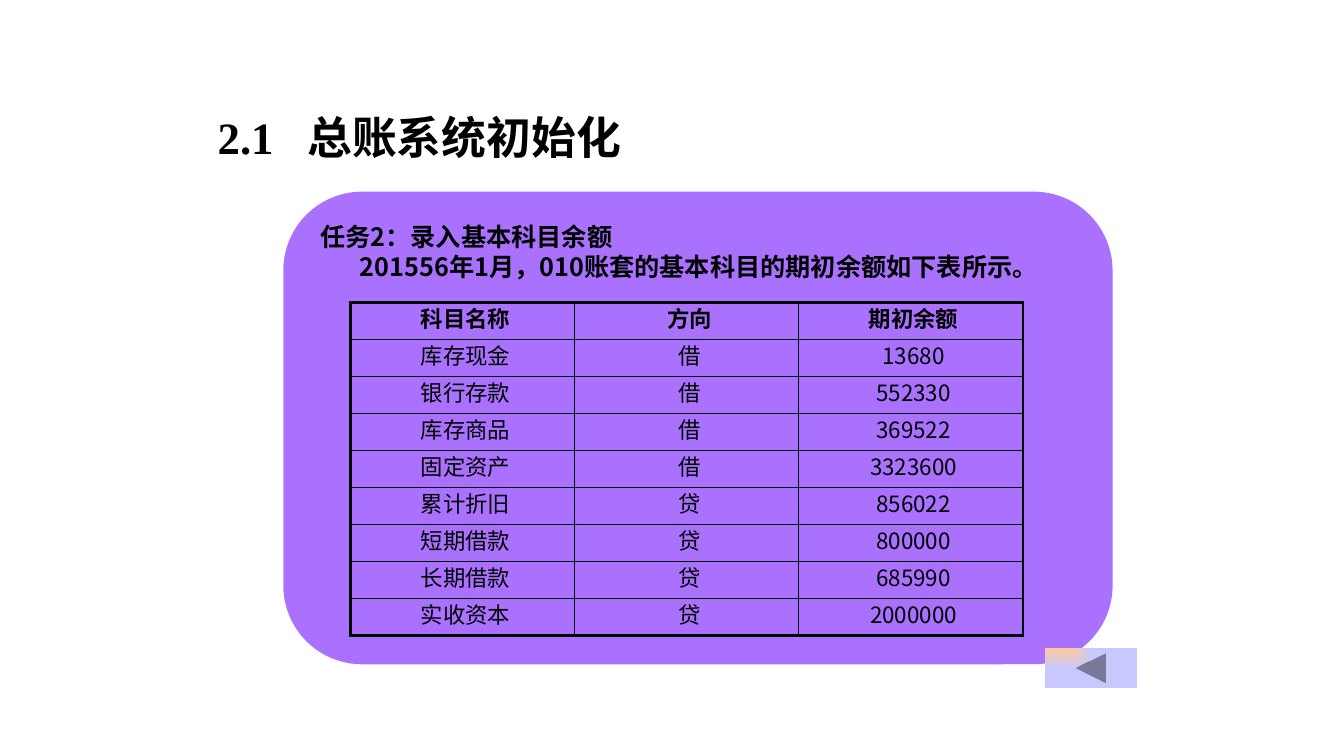
from dataclasses import dataclass

from lxml import etree
from pptx import Presentation
from pptx.dml.color import RGBColor
from pptx.enum.shapes import MSO_SHAPE
from pptx.enum.text import MSO_ANCHOR, MSO_AUTO_SIZE, PP_ALIGN
from pptx.oxml.ns import qn
from pptx.util import Cm, Pt

TITLE = "2.1\t总账系统初始化"
TASK = [
    ("任务2：录入基本科目余额", 0),
    ("201556年1月，010账套的基本科目的期初余额如下表所示。", 1),
]
BALANCES = [
    ("科目名称", "方向", "期初余额"),
    ("库存现金", "借", "13680"),
    ("银行存款", "借", "552330"),
    ("库存商品", "借", "369522"),
    ("固定资产", "借", "3323600"),
    ("累计折旧", "贷", "856022"),
    ("短期借款", "贷", "800000"),
    ("长期借款", "贷", "685990"),
    ("实收资本", "贷", "2000000"),
]

LEFT, CENTER = PP_ALIGN.LEFT, PP_ALIGN.CENTER
TOP, MIDDLE = MSO_ANCHOR.TOP, MSO_ANCHOR.MIDDLE
NO_AUTOFIT = MSO_AUTO_SIZE.NONE
ROUNDED, BACK_BUTTON = MSO_SHAPE.ROUNDED_RECTANGLE, MSO_SHAPE.ACTION_BUTTON_BACK_OR_PREVIOUS


@dataclass(frozen=True)
class Theme:
    ink: str = "000000"
    panel: str = "AA71FF"
    glow: str = "FFC89B"
    button: str = "C8C8FF"
    latin: str = "Times New Roman"
    cjk: str = "Noto Sans CJK SC"
    title: int = 32
    task: int = 18
    cell: int = 16
    frame: float = 2.25
    grid: float = 1


THEME = Theme()


def write(p, text, *, size, font=THEME.cjk, bold=False, align=LEFT, margin=0, indent=0, leading=None):
    p.alignment = align
    if leading:
        p.line_spacing = Pt(leading)
    pPr = p._p.get_or_add_pPr()
    pPr.set("marL", str(Cm(margin)))
    pPr.set("indent", str(Cm(indent)))
    r = p.add_run()
    r.text = text
    r.font.size = Pt(size)
    r.font.bold = bold
    r.font.color.rgb = RGBColor.from_string(THEME.ink)
    r.font.name = font
    etree.SubElement(r._r.get_or_add_rPr(), qn("a:ea"), typeface=THEME.cjk)


def add_plain_shape(slide, kind, left, top, width, height):
    sp = slide.shapes.add_shape(kind, Cm(left), Cm(top), Cm(width), Cm(height))
    sp.shadow.inherit = False
    sp.line.fill.background()
    return sp


def set_borders(cell, widths):
    tcPr = cell._tc.get_or_add_tcPr()
    for i, (side, width) in enumerate(widths.items()):
        ln = etree.Element(qn(f"a:ln{side}"), w=str(Pt(width)))
        fill = etree.SubElement(ln, qn("a:solidFill"))
        etree.SubElement(fill, qn("a:srgbClr"), val=THEME.ink)
        tcPr.insert(i, ln)


def add_title(slide):
    sp = slide.shapes.title
    sp.left, sp.top, sp.width, sp.height = Cm(5.23), Cm(2.62), Cm(22.6), Cm(1.63)
    tf = sp.text_frame
    tf.auto_size = NO_AUTOFIT
    tf.vertical_anchor = MIDDLE
    write(tf.paragraphs[0], TITLE, size=THEME.title, font=THEME.latin, bold=True,
          margin=2.26, indent=-2.26)


def add_task(slide):
    panel = add_plain_shape(slide, ROUNDED, 7.14, 4.83, 20.9, 11.91)
    panel.fill.solid()
    panel.fill.fore_color.rgb = RGBColor.from_string(THEME.panel)
    tf = slide.shapes.add_textbox(Cm(7.82), Cm(5.44), Cm(20.09), Cm(1.8)).text_frame
    tf.word_wrap = True
    for i, (text, indent) in enumerate(TASK):
        p = tf.add_paragraph() if i else tf.paragraphs[0]
        write(p, text, size=THEME.task, bold=True, indent=indent, leading=21.6)


def add_balances(slide):
    rows, cols = len(BALANCES), len(BALANCES[0])
    table = slide.shapes.add_table(rows, cols, Cm(8.84), Cm(7.62), Cm(16.94), Cm(8.4)).table
    table.first_row = table.horz_banding = False
    for row in table.rows:
        row.height = Cm(8.4 / rows)
    for i, record in enumerate(BALANCES):
        for j, text in enumerate(record):
            cell = table.cell(i, j)
            cell.vertical_anchor = TOP
            cell.fill.background()
            outer = {"L": j == 0, "R": j == cols - 1, "T": i == 0, "B": i == rows - 1}
            set_borders(cell, {side: THEME.frame if edge else THEME.grid
                               for side, edge in outer.items()})
            write(cell.text_frame.paragraphs[0], text, size=THEME.cell, bold=i == 0,
                  align=CENTER, margin=0.13, leading=19)


def add_back_button(slide):
    sp = add_plain_shape(slide, BACK_BUTTON, 26.34, 16.33, 2.31, 1.02)
    sp.fill.gradient()
    for stop, color in zip(sp.fill.gradient_stops, (THEME.glow, THEME.button)):
        stop.color.rgb = RGBColor.from_string(color)
    grad = sp._element.spPr.find(qn("a:gradFill"))
    grad.remove(grad.find(qn("a:lin")))
    corner = etree.SubElement(grad, qn("a:path"), path="rect")
    etree.SubElement(corner, qn("a:fillToRect"), r="100000", b="100000")


def main():
    prs = Presentation()
    prs.slide_width, prs.slide_height = Cm(33.87), Cm(19.05)
    slide = prs.slides.add_slide(prs.slide_layouts[5])
    add_task(slide)
    add_balances(slide)
    add_back_button(slide)
    add_title(slide)
    prs.save("out.pptx")


if __name__ == "__main__":
    main()
